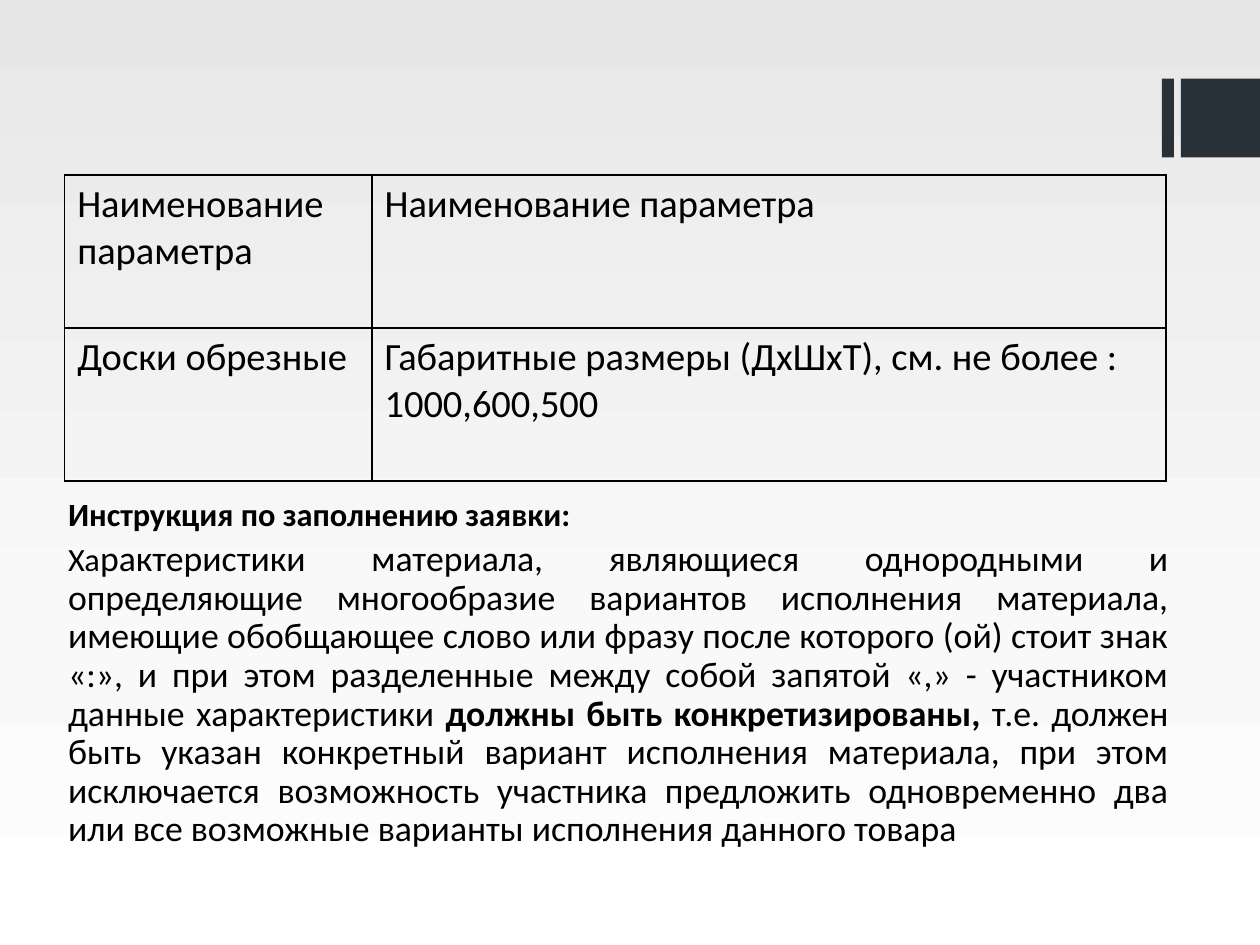
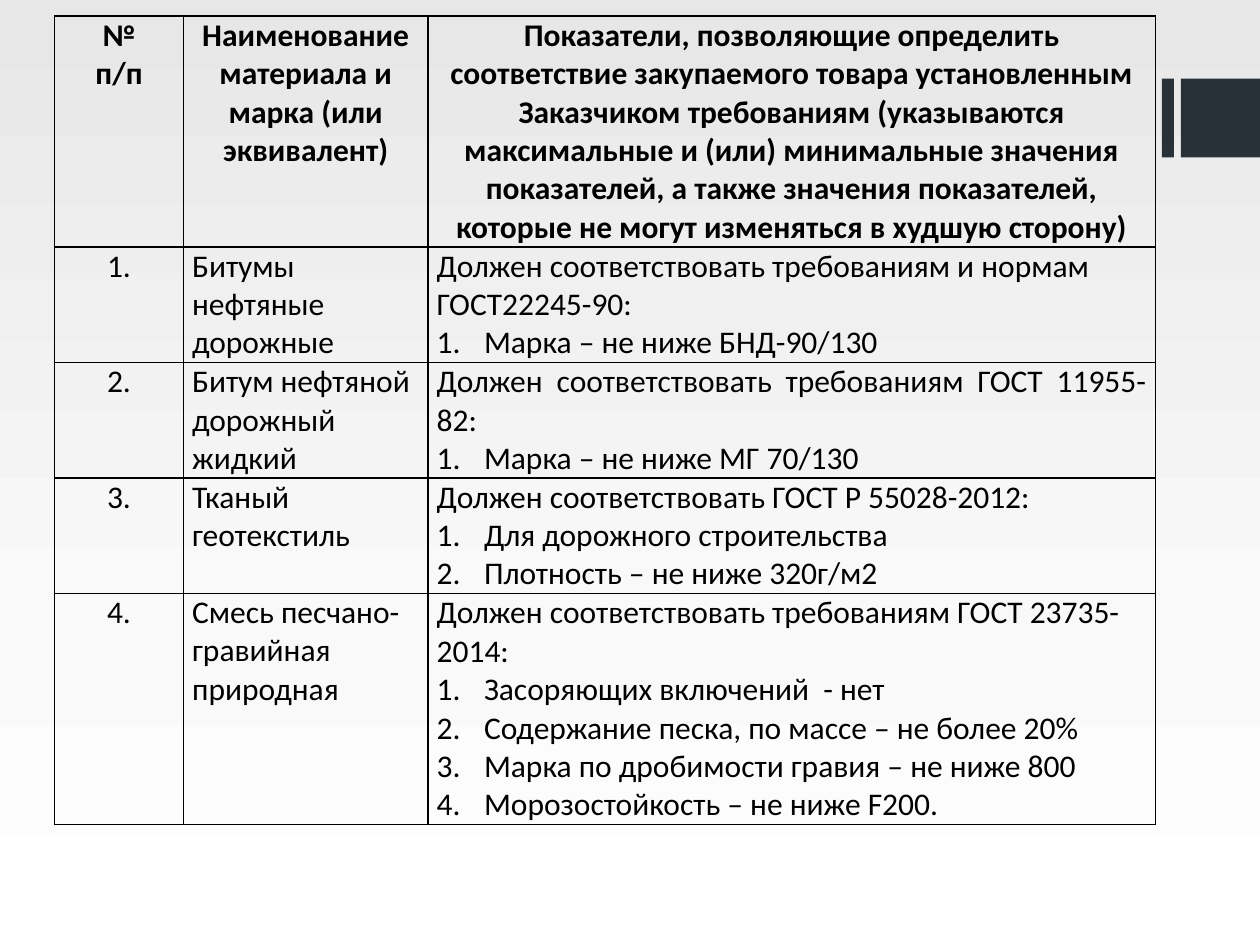
import copy

import pptx
import pptx.util
import pptx.dml.color
import pptx.enum.shapes
import pptx.enum.text
import pptx.oxml
import pptx.oxml.ns

Pt = pptx.util.Pt
qn = pptx.oxml.ns.qn
ALIGN = pptx.enum.text.PP_ALIGN
LEFT, CENTER, JUSTIFY = ALIGN.LEFT, ALIGN.CENTER, ALIGN.JUSTIFY

COLORS = {"text": "000000", "band": "283138",
          "top": "E7E7E7", "middle": "F9F9F9", "bottom": "FFFFFF"}
FONT = "Calibri"


def rgb(name):
    return pptx.dml.color.RGBColor.from_string(COLORS[name])


class Deck:
    """Holds the shared style and the current slide."""

    def __init__(self):
        self.prs = pptx.Presentation()
        self.prs.slide_width, self.prs.slide_height = Pt(720), Pt(540)
        self.s = None
        self.background()

    def background(self):
        master = self.prs.slide_master
        fill = master.background.fill
        fill.gradient()
        fill.gradient_angle = 270
        stops = master.element.find(".//" + qn("a:gsLst"))
        stops.append(copy.deepcopy(stops[0]))
        marks = ((0, "top"), (0.65, "middle"), (1, "bottom"))
        for stop, (position, color) in zip(fill.gradient_stops, marks):
            stop.position = position
            stop.color.rgb = rgb(color)

    def slide(self):
        self.s = self.prs.slides.add_slide(self.prs.slide_layouts[6])
        for left, width in ((664, 6.8), (674.8, 45.2)):
            self.band(left, 45, width, 45)

    def band(self, left, top, width, height):
        sp = self.s.shapes.add_shape(pptx.enum.shapes.MSO_SHAPE.RECTANGLE,
                                     Pt(left), Pt(top), Pt(width), Pt(height))
        sp.shadow.inherit = False
        sp.fill.solid()
        sp.fill.fore_color.rgb = rgb("band")
        sp.line.fill.background()

    def style(self, p, size, bold=False):
        for r in p.runs:
            r.font.name, r.font.size, r.font.bold = FONT, Pt(size), bold
            r.font.color.rgb = rgb("text")

    def text(self, left, top, width, height, paragraphs):
        """Each paragraph is a list of (text, size, bold) runs."""
        sp = self.s.shapes.add_textbox(Pt(left), Pt(top), Pt(width), Pt(height))
        tf = sp.text_frame
        tf.word_wrap = True
        for i, runs in enumerate(paragraphs):
            p = tf.add_paragraph() if i else tf.paragraphs[0]
            p.alignment, p.line_spacing, p.space_before = JUSTIFY, 0.9, Pt(4)
            p._p.get_or_add_pPr().set("marL", str(Pt(3.6)))
            for text, size, bold in runs:
                r = p.add_run()
                r.text = text
                r.font.name, r.font.size, r.font.bold = FONT, Pt(size), bold
                r.font.color.rgb = rgb("text")

    def table(self, left, top, widths, heights):
        tb = self.s.shapes.add_table(len(heights), len(widths), Pt(left), Pt(top),
                                     Pt(sum(widths)), Pt(sum(heights))).table
        tb.first_row = tb.horz_banding = False
        for column, width in zip(tb.columns, widths):
            column.width = Pt(width)
        for row, height in zip(tb.rows, heights):
            row.height = Pt(height)
        for cell in tb.iter_cells():
            self.borders(cell)
            cell.fill.background()
        return tb

    def borders(self, cell):
        tcPr = cell._tc.get_or_add_tcPr()
        for side in ("lnL", "lnR", "lnT", "lnB"):
            ln = pptx.oxml.parse_xml(
                f'<a:{side} {pptx.oxml.ns.nsdecls("a")} w="{Pt(1)}"><a:solidFill>'
                f'<a:srgbClr val="{COLORS["text"]}"/></a:solidFill></a:{side}>')
            tcPr.append(ln)

    def cell(self, cell, text, size, align=LEFT, bold=False, tight=False):
        if tight:
            cell.margin_left = cell.margin_right = Pt(5)
            cell.margin_top = cell.margin_bottom = 0
        cell.text_frame.text = text
        for p in cell.text_frame.paragraphs:
            p.alignment = align
            self.style(p, size, bold)

    def number(self, p):
        pPr = p._p.get_or_add_pPr()
        pPr.set("marL", str(Pt(27)))
        pPr.set("indent", str(-Pt(27)))
        pPr.append(pptx.oxml.parse_xml(
            f'<a:buAutoNum {pptx.oxml.ns.nsdecls("a")} type="arabicPeriod"/>'))


def instruction_slide(deck):
    deck.slide()

    # Instruction under the table
    deck.text(28.2, 281.5, 646.5, 227, [
        [("Инструкция по заполнению заявки:", 18.5, True)],
        [("Ха", 18.5, False),
         ("рактеристики материала, являющиеся однородными и определяющие "
          "многообразие вариантов исполнения материала, имеющие обобщающее слово "
          "или фразу после которого (ой) стоит знак «:», и при этом разделенные "
          "между собой запятой «,» - участником данные характеристики ", 20.4, False),
         ("должны быть конкретизированы,", 20.4, True),
         (" т.е. должен быть указан конкретный вариант исполнения материала, при "
          "этом исключается возможность участника предложить одновременно два или "
          "все возможные варианты исполнения данного товара", 20.4, False)],
    ])

    # Parameter table
    texts = ("Наименование параметра", "Наименование параметра", "Доски обрезные",
             "Габаритные размеры (ДхШхТ), см. не более : 1000,600,500")
    tb = deck.table(37, 100, (175.6, 453.6), (87.4, 87.4))
    for cell, text in zip(tb.iter_cells(), texts):
        deck.cell(cell, text, 22)


def materials_slide(deck):
    deck.slide()
    tb = deck.table(31.2, 9.2, (73.6, 139.8, 415.6), (132, 66, 66, 66, 132))

    # Header row
    headers = ("№\nп/п", "Наименование материала и марка (или эквивалент)",
               "Показатели, позволяющие определить соответствие закупаемого товара "
               "установленным Заказчиком требованиям (указываются максимальные и "
               "(или) минимальные значения показателей, а также значения "
               "показателей, которые не могут изменяться в худшую сторону)")
    for column, text in enumerate(headers):
        deck.cell(tb.cell(0, column), text, 18, CENTER, bold=True, tight=True)

    # Materials: name, alignment, requirement, numbered indicators
    materials = (
        ("Битумы нефтяные дорожные", LEFT,
         "Должен соответствовать требованиям и нормам ГОСТ22245-90:",
         "Марка – не ниже БНД-90/130"),
        ("Битум нефтяной дорожный жидкий", JUSTIFY,
         "Должен соответствовать требованиям ГОСТ 11955-82:",
         "Марка – не ниже МГ 70/130"),
        ("Тканый геотекстиль", LEFT,
         "Должен соответствовать ГОСТ Р 55028-2012:",
         "Для дорожного строительства", "Плотность – не ниже 320г/м2"),
        ("Смесь песчано-гравийная природная", LEFT,
         "Должен соответствовать требованиям ГОСТ 23735-2014:",
         "Засоряющих включений  - нет", "Содержание песка, по массе – не более 20%",
         "Марка по дробимости гравия – не ниже 800",
         "Морозостойкость – не ниже F200."),
    )
    for row, (name, align, *lines) in enumerate(materials, 1):
        deck.cell(tb.cell(row, 0), f"{row}.", 18, CENTER, tight=True)
        deck.cell(tb.cell(row, 1), name, 18, tight=True)
        indicators = tb.cell(row, 2)
        deck.cell(indicators, "\n".join(lines), 18, align, tight=True)
        for p in indicators.text_frame.paragraphs[1:]:
            deck.number(p)
    indicators.vertical_anchor = pptx.enum.text.MSO_ANCHOR.MIDDLE


def main():
    deck = Deck()
    instruction_slide(deck)
    materials_slide(deck)
    deck.prs.save("out.pptx")


if __name__ == "__main__":
    main()
